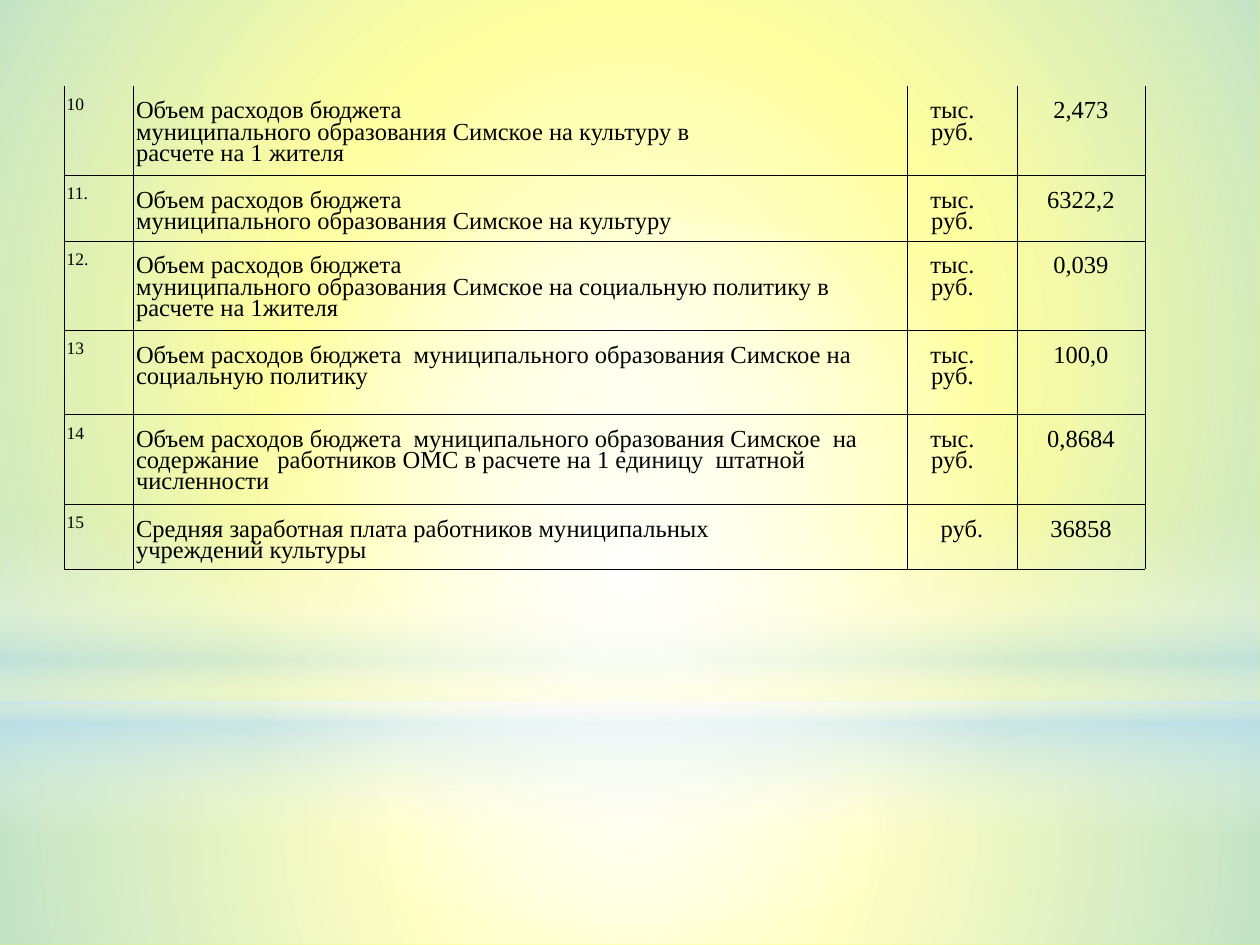
from lxml import etree
from pptx import Presentation
from pptx.dml.color import RGBColor
from pptx.enum.shapes import MSO_SHAPE
from pptx.enum.text import PP_ALIGN
from pptx.oxml.ns import qn
from pptx.util import Inches, Pt

RECTANGLE, OVAL = MSO_SHAPE.RECTANGLE, MSO_SHAPE.OVAL
LEFT, CENTER = PP_ALIGN.LEFT, PP_ALIGN.CENTER
BLACK = RGBColor(0x00, 0x00, 0x00)
WHITE = RGBColor(0xFF, 0xFF, 0xFF)
YELLOW = RGBColor(0xFF, 0xFF, 0x00)
SKY = RGBColor(0xB4, 0xDC, 0xFA)
FONT = "Times New Roman"
BORDER_WIDTH = Pt(0.06)

COLUMN_WIDTHS = [0.55, 6.14, 0.87, 1.02]
ROW_HEIGHTS = [0.71, 0.52, 0.71, 0.67, 0.71, 0.52]
THOUSANDS = "тыс.\nруб."
ROWS = [
    ("10", "Объем расходов бюджета\nмуниципального образования Симское на культуру в\n"
     "расчете на 1 жителя", THOUSANDS, "2,473"),
    ("11.", "Объем расходов бюджета\nмуниципального образования Симское на культуру",
     THOUSANDS, "6322,2"),
    ("12.", "Объем расходов бюджета\nмуниципального образования Симское на социальную "
     "политику в расчете на 1жителя", THOUSANDS, "0,039"),
    ("13", "Объем расходов бюджета  муниципального образования Симское на "
     "социальную политику", THOUSANDS, "100,0"),
    ("14", "Объем расходов бюджета  муниципального образования Симское  на содержание   "
     "работников ОМС в расчете на 1 единицу  штатной численности", THOUSANDS, "0,8684"),
    ("15", "Средняя заработная плата работников муниципальных\nучреждений культуры",
     "руб.", "36858"),
]

# Gradient stops: position, colour and opacity in percent
LOWER_GLOW = [(0, WHITE, 91), (37, WHITE, 76), (100, SKY, 79)]
UPPER_GLOW = [(0, WHITE, 89), (48, WHITE, 62), (100, SKY, 79)]
HORIZON = [(0, WHITE, 0), (29, WHITE, 30), (45, SKY, 40),
           (55, WHITE, 26), (65, SKY, 60), (100, WHITE, 0)]
SPOTLIGHT = [(0, WHITE, 100), (56, WHITE, 0)]


def add_element(parent, tag, **attributes):
    values = {name: str(value) for name, value in attributes.items()}
    return etree.SubElement(parent, qn(tag), values)


def set_gradient(shape, stops, angle=None):
    """Fill with translucent stops: linear at an angle, else circular."""
    shape.fill.gradient()
    gradient = shape._element.spPr.find(qn("a:gradFill"))
    for child in list(gradient):
        gradient.remove(child)
    stop_list = add_element(gradient, "a:gsLst")
    for position, colour, opacity in stops:
        stop = add_element(stop_list, "a:gs", pos=position * 1000)
        stop_colour = add_element(stop, "a:srgbClr", val=colour)
        add_element(stop_colour, "a:alpha", val=opacity * 1000)
    if angle is None:
        circle = add_element(gradient, "a:path", path="circle")
        add_element(circle, "a:fillToRect", l=50000, t=50000, r=50000, b=50000)
    else:
        add_element(gradient, "a:lin", ang=angle * 60000, scaled=1)


def add_glow(slide, kind, top, height, stops, angle=None):
    shape = slide.shapes.add_shape(kind, 0, Inches(top), Inches(10), Inches(height))
    shape.shadow.inherit = False
    shape.line.fill.background()
    set_gradient(shape, stops, angle)


def add_backdrop(slide):
    fill = slide.background.fill
    fill.solid()
    fill.fore_color.rgb = YELLOW
    add_glow(slide, RECTANGLE, 5.58, 1.92, LOWER_GLOW)
    add_glow(slide, RECTANGLE, 0, 5.58, UPPER_GLOW)
    add_glow(slide, RECTANGLE, 4.12, 2.5, HORIZON, angle=90)
    add_glow(slide, OVAL, 1.75, 5.58, SPOTLIGHT)


def set_borders(cell, has_top):
    properties = cell._tc.get_or_add_tcPr()
    for tag in ("a:lnL", "a:lnR", "a:lnT", "a:lnB"):
        line = add_element(properties, tag, w=BORDER_WIDTH)
        if tag == "a:lnT" and not has_top:
            add_element(line, "a:noFill")
        else:
            solid = add_element(line, "a:solidFill")
            add_element(solid, "a:srgbClr", val=BLACK)


def fill_cell(cell, text, size, alignment, top_margin, right_margin):
    cell.margin_left, cell.margin_right = Inches(0.02), Inches(right_margin)
    cell.margin_top, cell.margin_bottom = Inches(top_margin), 0
    cell.text = text
    for paragraph in cell.text_frame.paragraphs:
        paragraph.alignment = alignment
        paragraph.line_spacing = 0.78
        paragraph.font.name = FONT
        paragraph.font.size = Pt(size)
        paragraph.font.color.rgb = BLACK


def add_budget_table(slide, left, top, width, height):
    frame = slide.shapes.add_table(len(ROWS), len(COLUMN_WIDTHS), Inches(left),
                                   Inches(top), Inches(width), Inches(height))
    table = frame.table
    table.first_row = table.horz_banding = False
    for column, column_width in zip(table.columns, COLUMN_WIDTHS):
        column.width = Inches(column_width)
    for row, row_height in zip(table.rows, ROW_HEIGHTS):
        row.height = Inches(row_height)
    for row_index, values in enumerate(ROWS):
        for column_index, text in enumerate(values):
            cell = table.cell(row_index, column_index)
            set_borders(cell, has_top=row_index > 0)
            cell.fill.background()
            is_number = column_index == 0
            fill_cell(cell, text,
                      size=10 if is_number else 14,
                      alignment=LEFT if column_index < 2 else CENTER,
                      top_margin=0.1 if is_number else 0.13,
                      # Two-line units sit slightly left of centre
                      right_margin=0.17 if text == THOUSANDS else 0.02)


def main():
    presentation = Presentation()
    presentation.slide_width, presentation.slide_height = Inches(10), Inches(7.5)
    slide = presentation.slides.add_slide(presentation.slide_layouts[6])
    add_backdrop(slide)
    add_budget_table(slide, 0.51, 0.68, sum(COLUMN_WIDTHS), sum(ROW_HEIGHTS))
    presentation.save("out.pptx")


if __name__ == "__main__":
    main()
